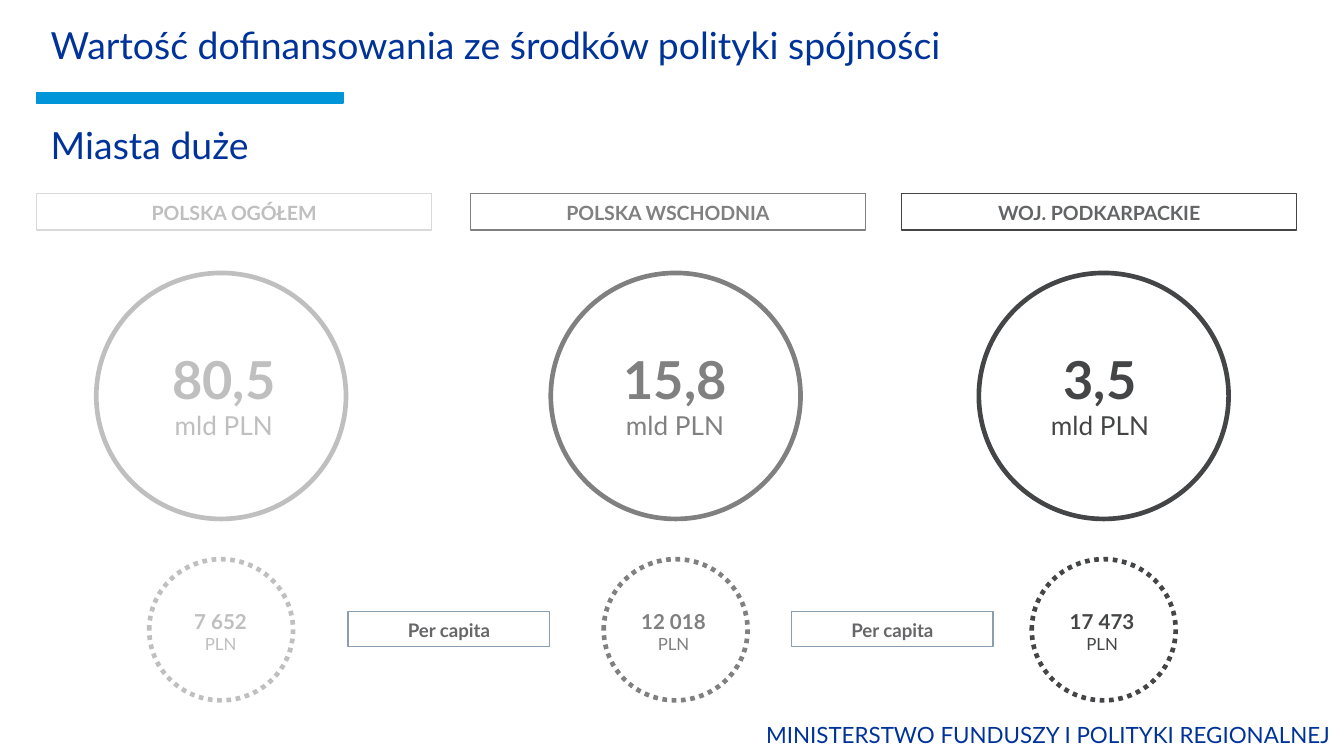
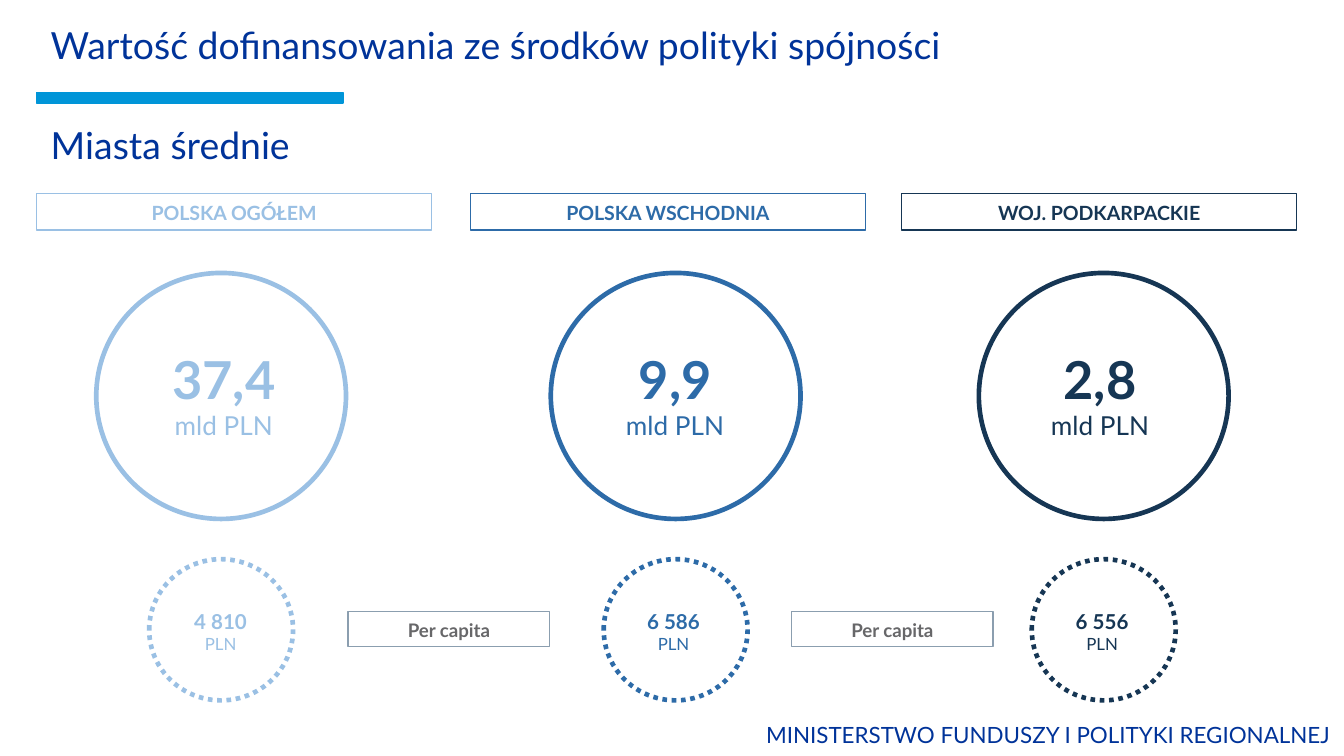
"""Build two slides comparing cohesion policy funding for large and medium cities."""
import dataclasses

import pptx
import pptx.dml.color
import pptx.enum.dml
import pptx.enum.shapes
import pptx.enum.text
import pptx.util

Cm = pptx.util.Cm
Kind = pptx.enum.shapes.MSO_SHAPE
Align = pptx.enum.text.PP_ALIGN
Anchor = pptx.enum.text.MSO_ANCHOR
Fit = pptx.enum.text.MSO_AUTO_SIZE


@dataclasses.dataclass(frozen=True)
class Theme:
    font: str = "Lato"
    navy: str = "003399"
    bar: str = "0095D8"
    label_line: str = "8B9EAF"
    label_text: str = "676769"
    title: float = 20
    footer: float = 12
    header: float = 10.5
    amount: float = 28
    amount_unit: float = 14
    per_capita: float = 11
    per_capita_unit: float = 9
    label: float = 10
    hairline: float = 0
    ring: float = 2.5


theme = Theme()


def add_outline(shapes, kind, place, colour, width, dash=None, fill=None):
    shape = shapes.add_shape(kind, *map(Cm, place))
    shape.shadow.inherit = False
    if fill:
        shape.fill.solid()
        shape.fill.fore_color.rgb = pptx.dml.color.RGBColor.from_string(fill)
    else:
        shape.fill.background()
    shape.line.color.rgb = pptx.dml.color.RGBColor.from_string(colour)
    line_format = {"width": pptx.util.Pt(width), "dash_style": dash}
    for name, value in line_format.items():
        setattr(shape.line, name, value)
    return shape


def write_text(shape, lines, colour, align=Align.CENTER, anchor=Anchor.TOP, fit=Fit.SHAPE_TO_FIT_TEXT):
    frame = shape.text_frame
    frame_format = {
        "word_wrap": True, "auto_size": fit, "vertical_anchor": anchor,
        "margin_left": Cm(0.25), "margin_right": Cm(0.25),
        "margin_top": Cm(0.13), "margin_bottom": Cm(0.13),
    }
    for name, value in frame_format.items():
        setattr(frame, name, value)
    for index, (text, size, bold) in enumerate(lines):
        paragraph = frame.add_paragraph() if index else frame.paragraphs[0]
        paragraph.alignment = align
        run = paragraph.add_run()
        run.text = text
        run.font.color.rgb = pptx.dml.color.RGBColor.from_string(colour)
        font_format = {"name": theme.font, "size": pptx.util.Pt(size), "bold": bold}
        for name, value in font_format.items():
            setattr(run.font, name, value)


presentation = pptx.Presentation()
presentation.slide_width, presentation.slide_height = Cm(25.4), Cm(14.29)

headline = "Wartość dofinansowania ze środków polityki spójności"
ministry = "MINISTERSTWO FUNDUSZY I POLITYKI REGIONALNEJ"

regions = [
    ("POLSKA OGÓŁEM", 0.69, 4.18, 4.23, 4.17),
    ("POLSKA WSCHODNIA", 8.89, 12.77, 12.76, 12.73),
    ("WOJ. PODKARPACKIE", 17.04, 20.86, 20.79, 20.83),
]
label_lefts = [6.58, 14.96]

city_groups = [
    ("Miasta duże", [
        ("80,5", "7 652", "BFBFBF", "D9D9D9", "BFBFBF"),
        ("15,8", "12 018", "808080", "808080", "808080"),
        ("3,5", "17 473", "444546", "444546", "626465"),
    ]),
    ("Miasta średnie", [
        ("37,4", "4 810", "9AC0E4", "9AC0E4", "9AC0E4"),
        ("9,9", "6 586", "2D6BA8", "2D6BA8", "2D6BA8"),
        ("2,8", "6 556", "163654", "163654", "163654"),
    ]),
]

for city_size, figures in city_groups:
    slide = presentation.slides.add_slide(presentation.slide_layouts[6])
    shapes = slide.shapes

    add_outline(shapes, Kind.RECTANGLE, (0.69, 1.75, 5.79, 0.2), theme.bar, 1, fill=theme.bar)
    for text, size, align, place in [
        (ministry, theme.footer, Align.RIGHT, (11.61, 13.49, 13.79, 0.81)),
        (headline, theme.title, Align.LEFT, (0.71, -0.05, 23.98, 1.8)),
        (city_size, theme.title, Align.LEFT, (0.71, 1.93, 17.6, 1.6)),
    ]:
        textbox = shapes.add_textbox(*map(Cm, place))
        write_text(textbox, [(text, size, False)], theme.navy, align, Anchor.MIDDLE, Fit.NONE)

    for region, figure in zip(regions, figures):
        region_name, header_left, ring_centre, amount_centre, per_capita_centre = region
        amount, per_capita, colour, header_line, header_text = figure

        header = add_outline(shapes, Kind.RECTANGLE, (header_left, 3.66, 7.47, 0.69),
                             header_line, theme.hairline)
        write_text(header, [(region_name, theme.header, True)], header_text)

        add_outline(shapes, Kind.OVAL, (ring_centre - 2.36, 5.16, 4.72, 4.65), colour, theme.ring)
        textbox = shapes.add_textbox(*map(Cm, (amount_centre - 1.66, 6.43, 3.32, 2.03)))
        write_text(textbox, [(amount, theme.amount, True),
                             ("mld PLN", theme.amount_unit, False)], colour)

        group = shapes.add_group_shape()
        add_outline(group.shapes, Kind.OVAL, (ring_centre - 1.36, 10.57, 2.72, 2.67),
                    colour, theme.ring, pptx.enum.dml.MSO_LINE.ROUND_DOT)
        textbox = group.shapes.add_textbox(*map(Cm, (per_capita_centre - 1, 11.38, 2, 1.09)))
        write_text(textbox, [(per_capita, theme.per_capita, True),
                             ("PLN", theme.per_capita_unit, False)], colour)

    for left in label_lefts:
        label = add_outline(shapes, Kind.RECTANGLE, (left, 11.56, 3.81, 0.66),
                            theme.label_line, theme.hairline)
        write_text(label, [("Per capita", theme.label, True)], theme.label_text)

presentation.save("out.pptx")
